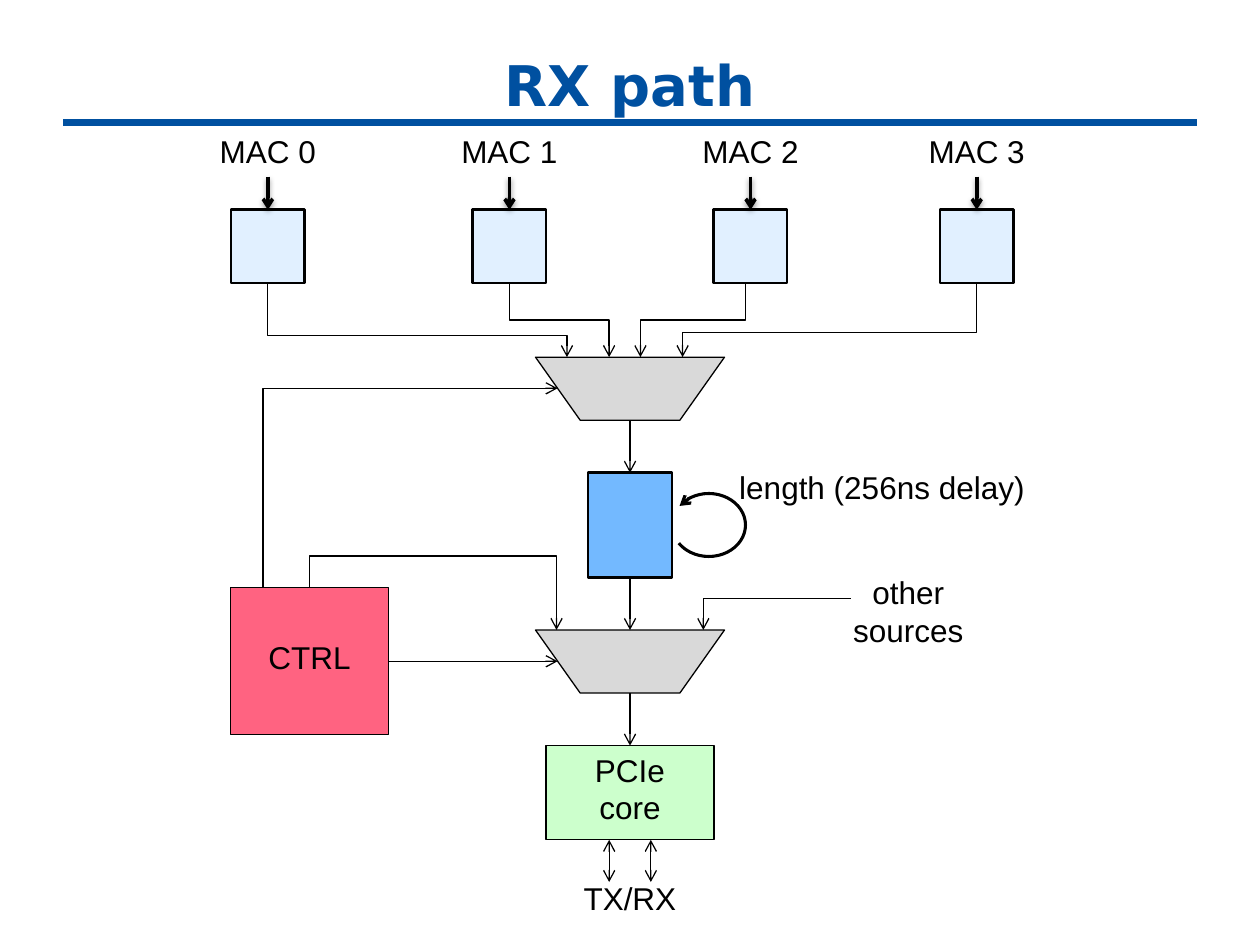
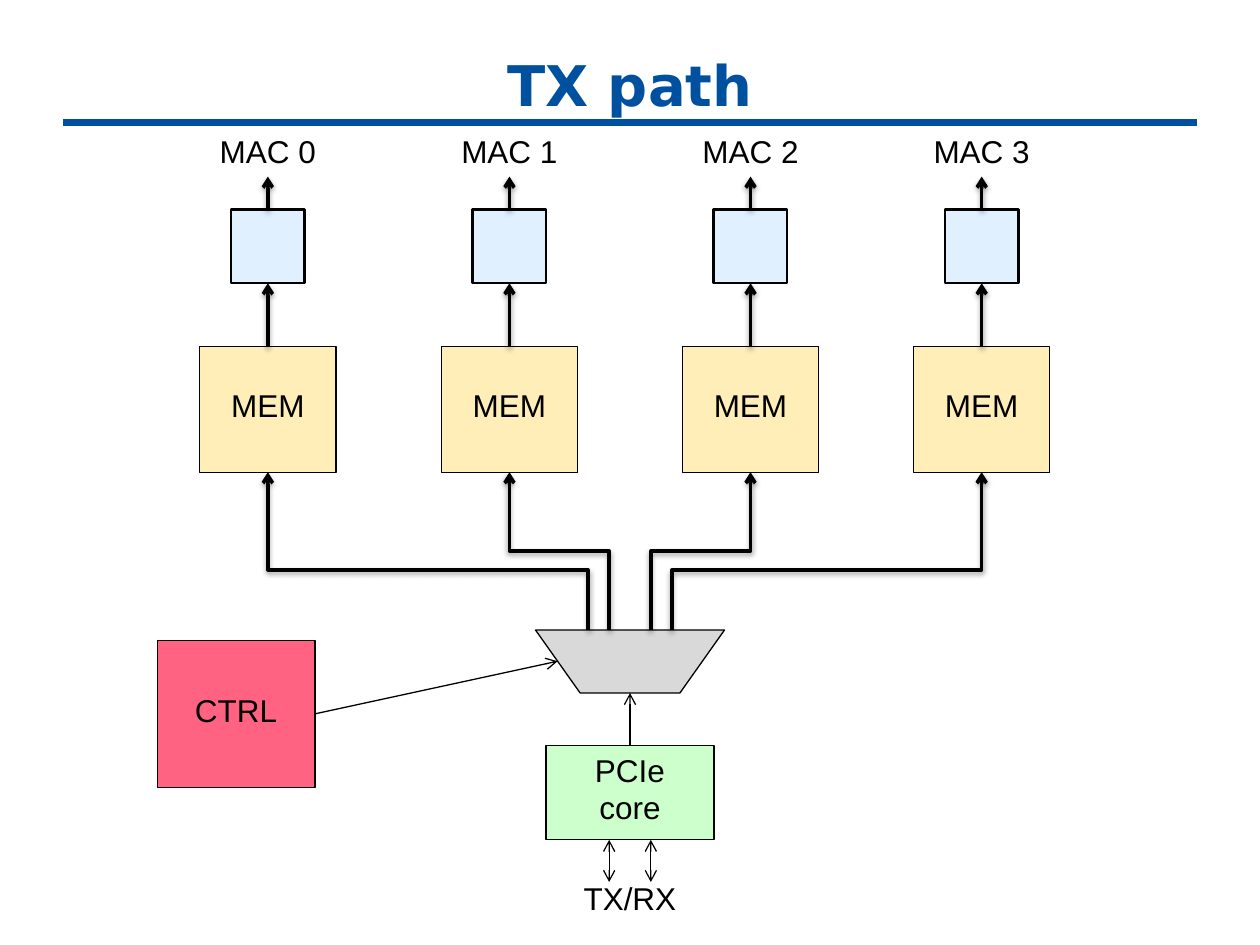
from dataclasses import dataclass
from typing import Optional

from lxml import etree
from pptx import Presentation
from pptx import util as u
from pptx.dml.color import RGBColor
from pptx.enum import shapes, text
from pptx.oxml.ns import qn
from pptx.slide import Slide

COLORS = {
    "title": "0050A0", "ink": "000000", "port": "E1F0FF", "mux": "D9D9D9",
    "fifo": "73B9FF", "core": "CCFFCC", "ctrl": "FF6381", "mem": "FFEEB8",
}
TITLE_FONT, BODY_FONT = "DejaVu Sans", "Arial"
RECT = shapes.MSO_SHAPE.RECTANGLE
TRAPEZOID = shapes.MSO_SHAPE.TRAPEZOID
THIN, THICK = 0.75, 2

# Shared geometry in centimetres
MIDDLE = 12.7
LABEL_TOP, LABEL_HEIGHT = 2.54, 1.02
PORT_TOP, PORT_SIZE = 4.23, 1.48
PORT_BOTTOM = PORT_TOP + PORT_SIZE
MUX_WIDTH, MUX_HEIGHT = 3.81, 1.27
UPPER_MUX, LOWER_MUX = 7.2, 12.7
MUX_SIDE = 11.24
CORE_TOP, CORE_HEIGHT = 15.03, 1.9
CORE_BOTTOM = CORE_TOP + CORE_HEIGHT
CTRL_WIDTH, CTRL_HEIGHT = 3.18, 2.96

Point = tuple[float, float]


@dataclass
class Block:
    """A filled shape, placed by its horizontal centre and its top."""
    center: float
    top: float
    width: float
    height: float
    color: str
    words: str = ""
    outline: float = THIN
    preset: shapes.MSO_SHAPE = RECT


@dataclass
class Label:
    words: str
    center: float
    top: float
    width: float
    height: float = LABEL_HEIGHT


@dataclass
class Wire:
    """route: straight, vertical or horizontal (first leg), or corner."""
    start: Point
    end: Point
    route: str = "straight"
    bend: Optional[float] = None
    width: float = THIN
    both_ends: bool = False


def rgb(name: str) -> RGBColor:
    return RGBColor.from_string(COLORS[name])


def style_text(frame: text, words: str) -> None:
    frame.word_wrap = True
    frame.text = words
    for para in frame.paragraphs:
        para.alignment = text.PP_ALIGN.CENTER
        para.font.name = BODY_FONT
        para.font.size = u.Pt(18)
        para.font.color.rgb = rgb("ink")


def style_line(line, width: float, color: str = "ink") -> None:
    line.color.rgb = rgb(color)
    line.width = u.Pt(width)


def add_arrowhead(line_xml, end: str) -> None:
    etree.SubElement(line_xml, qn(f"a:{end}End"), type="arrow")


def draw_block(page: Slide, block: Block) -> None:
    box = page.shapes.add_shape(
        block.preset, u.Cm(block.center - block.width / 2), u.Cm(block.top),
        u.Cm(block.width), u.Cm(block.height))
    box.shadow.inherit = False
    box.fill.solid()
    box.fill.fore_color.rgb = rgb(block.color)
    style_line(box.line, block.outline)
    if block.preset == TRAPEZOID:
        box.rotation = 180
        box.adjustments[0] = 0.708
    if block.words:
        frame = box.text_frame
        style_text(frame, block.words)
        frame.vertical_anchor = text.MSO_ANCHOR.MIDDLE
        frame.margin_bottom = u.Cm(0.3)


def draw_label(page: Slide, label: Label) -> None:
    box = page.shapes.add_textbox(
        u.Cm(label.center - label.width / 2), u.Cm(label.top),
        u.Cm(label.width), u.Cm(label.height))
    style_text(box.text_frame, label.words)


def draw_wire(page: Slide, wire: Wire, color: str = "ink", arrow: bool = True) -> None:
    (x1, y1), (x2, y2) = wire.start, wire.end
    left, top, right, bottom = x1, y1, x2, y2
    rotation = 0
    if wire.route == "vertical":
        # A vertical first leg is a horizontal elbow turned about its centre
        rightward, downward = x2 > x1, y2 > y1
        rotation = 270 if rightward == downward else 90
        mid_x, mid_y = (x1 + x2) / 2, (y1 + y2) / 2
        half_w = abs(y2 - y1) / 2 * (-1 if rightward else 1)
        half_h = abs(x2 - x1) / 2 * (1 if downward else -1)
        left, right = mid_x - half_w, mid_x + half_w
        top, bottom = mid_y - half_h, mid_y + half_h

    kind = (shapes.MSO_CONNECTOR.STRAIGHT if wire.route == "straight"
            else shapes.MSO_CONNECTOR.ELBOW)
    connector = page.shapes.add_connector(
        kind, u.Cm(left), u.Cm(top), u.Cm(right), u.Cm(bottom))
    style_line(connector.line, wire.width, color)
    properties = connector.element.spPr
    geometry = properties.find(qn("a:prstGeom"))
    if rotation:
        properties.find(qn("a:xfrm")).set("rot", str(rotation * 60000))
    if wire.route == "corner":
        geometry.set("prst", "bentConnector2")
    if wire.bend is not None:
        first, last = (y1, y2) if wire.route == "vertical" else (x1, x2)
        share = round((wire.bend - first) / (last - first) * 100000)
        guides = geometry.find(qn("a:avLst"))
        etree.SubElement(guides, qn("a:gd"), name="adj1", fmla=f"val {share}")

    if arrow:
        line_xml = properties.find(qn("a:ln"))
        if wire.both_ends:
            add_arrowhead(line_xml, "head")
        add_arrowhead(line_xml, "tail")
    effects = etree.SubElement(properties, qn("a:effectLst"))
    if wire.width == THICK:
        shadow = etree.SubElement(
            effects, qn("a:outerShdw"), blurRad=str(u.Pt(3.1)),
            dist=str(u.Pt(1.6)), dir="5400000", rotWithShape="0")
        shade = etree.SubElement(shadow, qn("a:srgbClr"), val=COLORS["ink"])
        etree.SubElement(shade, qn("a:alpha"), val="38000")


def draw_loop(page: Slide) -> None:
    loop = page.shapes.add_shape(
        shapes.MSO_SHAPE.ARC, u.Cm(13.55), u.Cm(9.95), u.Cm(1.48), u.Cm(1.27))
    loop.shadow.inherit = False
    loop.fill.background()
    style_line(loop.line, 1.75)
    # Angles are stored in 60000ths of a degree, adjustments in 100000ths
    for index, degrees in enumerate((213.11, 148.72)):
        loop.adjustments[index] = degrees * 0.6
    add_arrowhead(loop.element.spPr.find(qn("a:ln")), "head")


def add_page(deck, title: str) -> Slide:
    page = deck.slides.add_slide(deck.slide_layouts[5])
    draw_wire(page, Wire((1.27, 2.46), (24.13, 2.46), width=4), "title", arrow=False)
    box = page.shapes.title
    box.left, box.top, box.width, box.height = (
        u.Cm(value) for value in (1.27, 0.85, 22.86, 1.69))
    frame = box.text_frame
    frame.text = title
    frame.auto_size = text.MSO_AUTO_SIZE.NONE
    frame.vertical_anchor = text.MSO_ANCHOR.MIDDLE
    para = frame.paragraphs[0]
    para.alignment = text.PP_ALIGN.CENTER
    para.font.name = TITLE_FONT
    para.font.size = u.Pt(32)
    para.font.bold = True
    para.font.color.rgb = rgb("title")
    return page


def mux(top: float) -> Block:
    return Block(MIDDLE, top, MUX_WIDTH, MUX_HEIGHT, "mux", preset=TRAPEZOID)


def ctrl(center: float, top: float) -> Block:
    return Block(center, top, CTRL_WIDTH, CTRL_HEIGHT, "ctrl", "CTRL")


def draw_ports(page: Slide, columns: list[float], inward: bool) -> None:
    """MAC labels, their boxes and the arrows between them."""
    for number, x in enumerate(columns):
        draw_label(page, Label(f"MAC {number}", x, LABEL_TOP, 3.18))
        draw_block(page, Block(x, PORT_TOP, PORT_SIZE, PORT_SIZE, "port", outline=1.5))
        outer, inner = (x, LABEL_TOP + LABEL_HEIGHT), (x, PORT_TOP)
        start, end = (outer, inner) if inward else (inner, outer)
        draw_wire(page, Wire(start, end, width=THICK))


def draw_core(page: Slide) -> None:
    """Lower multiplexer, PCIe core and its TX/RX link."""
    draw_block(page, mux(LOWER_MUX))
    draw_block(page, Block(MIDDLE, CORE_TOP, 3.39, CORE_HEIGHT, "core", "PCIe\ncore"))
    for x in (MIDDLE - 0.42, MIDDLE + 0.42):
        draw_wire(page, Wire((x, CORE_BOTTOM), (x, 17.78), both_ends=True))
    draw_label(page, Label("TX/RX", MIDDLE, 17.6, 3.39))


def build_rx(deck) -> None:
    page = add_page(deck, "RX path")
    draw_ports(page, [5.4, 10.27, 15.13, 19.69], inward=True)
    draw_core(page)

    # Upper multiplexer, FIFO and controller
    fifo_top, fifo_height, ctrl_top = 9.53, 2.11, 11.85
    for block in (mux(UPPER_MUX),
                  Block(MIDDLE, fifo_top, 1.69, fifo_height, "fifo", outline=1.5),
                  ctrl(6.24, ctrl_top)):
        draw_block(page, block)

    # Ports into the upper multiplexer
    for source, target, bend in ((5.4, 11.43, 6.76), (10.27, 12.28, 6.45),
                                 (15.03, 12.91, 6.45), (19.69, 13.76, 6.71)):
        draw_wire(page, Wire((source, PORT_BOTTOM), (target, UPPER_MUX), "vertical", bend))

    # Data flow down the middle
    for start, end in ((UPPER_MUX + MUX_HEIGHT, fifo_top),
                       (fifo_top + fifo_height, LOWER_MUX),
                       (LOWER_MUX + MUX_HEIGHT, CORE_TOP)):
        draw_wire(page, Wire((MIDDLE, start), (MIDDLE, end)))

    # Control lines and side input
    for wire in (Wire((7.83, 13.33), (MUX_SIDE, 13.33)),
                 Wire((6.24, ctrl_top), (11.22, LOWER_MUX), "vertical", 11.21),
                 Wire((5.3, ctrl_top), (MUX_SIDE, 7.83), "horizontal", 5.3),
                 Wire((17.15, 12.07), (14.18, LOWER_MUX), "corner")):
        draw_wire(page, wire)
    draw_loop(page)
    draw_label(page, Label("length (256ns delay)", 17.78, 9.31, 6.77))
    draw_label(page, Label("other sources", 18.31, 11.43, 3.18, 1.8))


def build_tx(deck) -> None:
    page = add_page(deck, "TX path")
    columns = [5.4, 10.27, 15.13, 19.79]
    draw_ports(page, columns, inward=False)
    draw_core(page)
    draw_block(page, ctrl(4.76, 12.91))
    draw_wire(page, Wire((6.35, 14.39), (MUX_SIDE, 13.33)))
    draw_wire(page, Wire((MIDDLE, CORE_TOP), (MIDDLE, LOWER_MUX + MUX_HEIGHT)))

    # One memory per port, fed from the multiplexer
    mem_top, mem_height = 6.98, 2.54
    outlets = (11.85, 12.28, 13.12, 13.55)
    bends = (11.49, 11.11, 11.11, 11.49)
    for x, outlet, bend in zip(columns, outlets, bends):
        draw_block(page, Block(x, mem_top, 2.75, mem_height, "mem", "MEM"))
        draw_wire(page, Wire((x, mem_top), (x, PORT_BOTTOM), width=THICK))
        draw_wire(page, Wire((outlet, LOWER_MUX), (x, mem_top + mem_height),
                             "vertical", bend, THICK))


def main() -> None:
    deck = Presentation()
    deck.slide_width, deck.slide_height = u.Cm(25.4), u.Cm(19.05)
    build_rx(deck)
    build_tx(deck)
    deck.save("out.pptx")


if __name__ == "__main__":
    main()
